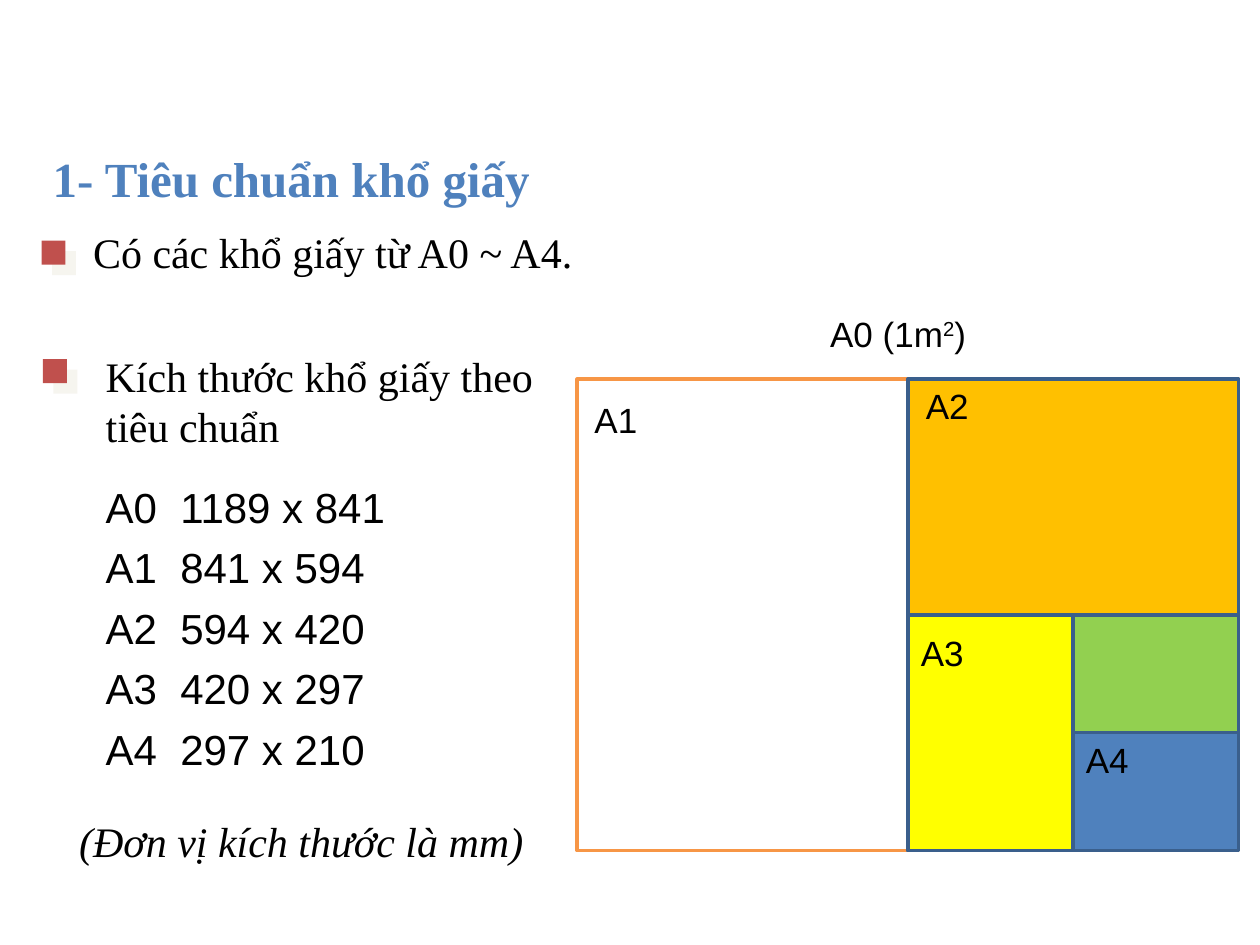
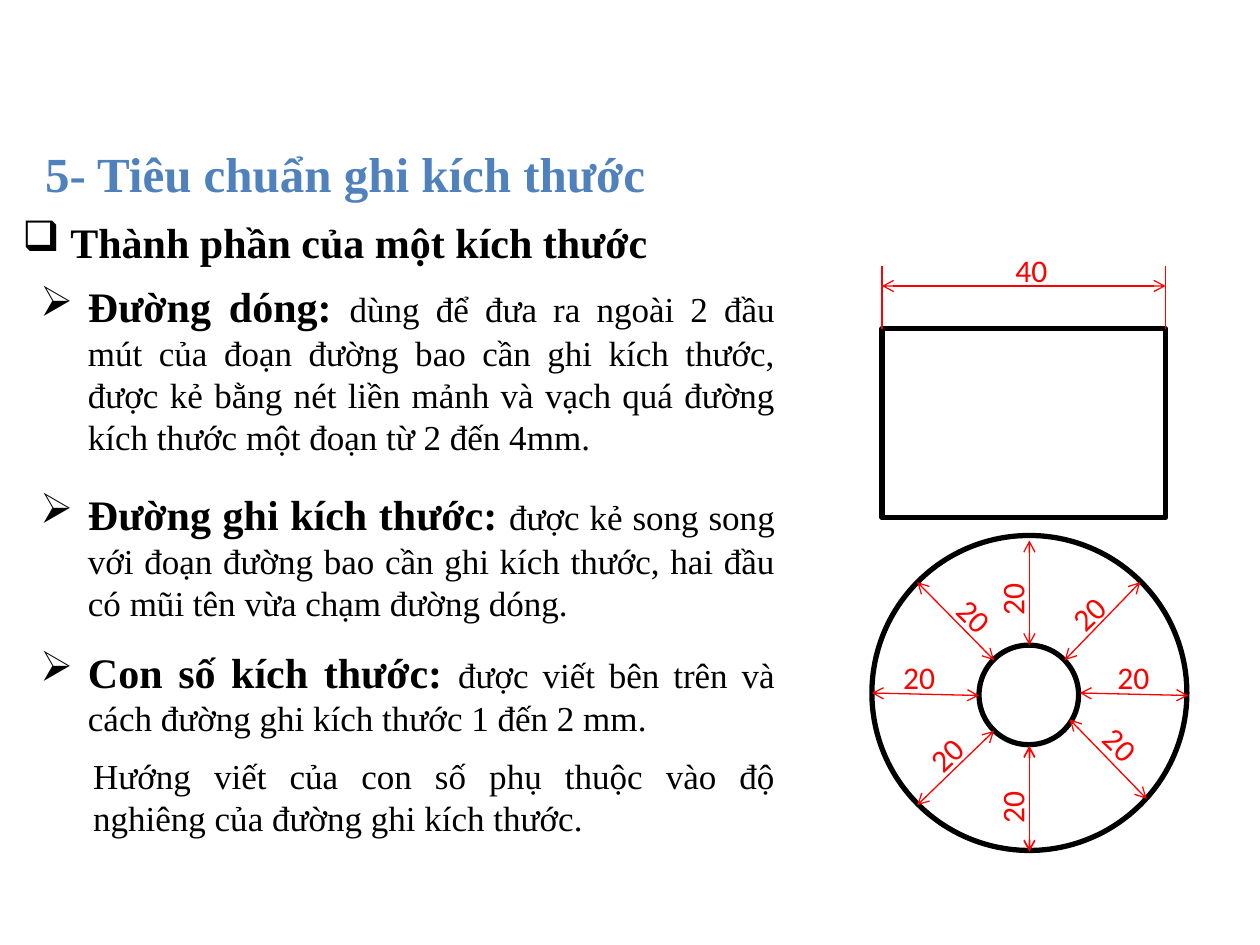
"""Two slides on drawing standards: paper sizes and dimensioning."""
from lxml import etree
from pptx import Presentation
from pptx.dml.color import RGBColor
from pptx.enum.shapes import MSO_CONNECTOR, MSO_SHAPE as SHAPE
from pptx.enum.text import MSO_AUTO_SIZE, PP_ALIGN
from pptx.oxml import parse_xml
from pptx.oxml.ns import nsdecls, qn
from pptx.util import Inches, Pt

BLACK = RGBColor(0x00, 0x00, 0x00)
WHITE = RGBColor(0xFF, 0xFF, 0xFF)
RED = RGBColor(0xFF, 0x00, 0x00)
BLUE = RGBColor(0x4F, 0x81, 0xBD)
NAVY = RGBColor(0x3A, 0x5F, 0x8C)
BRICK = RGBColor(0xC0, 0x50, 0x4D)
PEACH = RGBColor(0xF7, 0x96, 0x46)
ORANGE = RGBColor(0xFF, 0xC0, 0x00)
YELLOW = RGBColor(0xFF, 0xFF, 0x00)
GREEN = RGBColor(0x92, 0xD0, 0x50)
SERIF, SANS, DIGITS = "Times New Roman", "Arial", "Calibri"
TITLE = dict(size=28, color=BLUE, bold=True, wrap=False)
LABEL = dict(font=SANS, size=20, wrap=False)
NUMBER = dict(font=DIGITS, size=18, color=RED)
SHADOW = (f'<a:effectLst {nsdecls("a")}><a:outerShdw dist="107950" dir="2700000" algn="ctr">'
          '<a:srgbClr val="EEECE1"><a:alpha val="50000"/></a:srgbClr>'
          '</a:outerShdw></a:effectLst>')


def add_text(s, x, y, w, h, *paras, font=SERIF, size=24, color=BLACK, bold=False,
             italic=False, wrap=True, rot=0, align=PP_ALIGN.LEFT, bullet=None, spacing=None):
    """Add a text box; a paragraph is a string or a list of (text, size, bold) runs."""
    box = s.shapes.add_textbox(Inches(x), Inches(y), Inches(w), Inches(h))
    box.rotation = rot
    tf = box.text_frame
    tf.word_wrap = wrap
    tf.auto_size = MSO_AUTO_SIZE.SHAPE_TO_FIT_TEXT
    for i, para in enumerate(paras):
        p = tf.add_paragraph() if i else tf.paragraphs[0]
        p.alignment = align
        p.line_spacing = spacing
        if bullet:
            pPr = p._p.get_or_add_pPr()
            pPr.set("marL", str(Inches(0.38)))
            pPr.set("indent", str(-Inches(0.38)))
            etree.SubElement(pPr, qn("a:buChar")).set("char", bullet)
        for run in [(para, size, bold)] if isinstance(para, str) else para:
            r = p.add_run()
            r.text, points, r.font.bold = run
            r.font.size = Pt(points)
            r.font.name = font
            r.font.italic = italic
            r.font.color.rgb = color
    return tf


def add_figure(s, kind, x, y, w, h, fill, line=None, width=2):
    """Add a filled preset shape, outlined when a line colour is given."""
    sp = s.shapes.add_shape(kind, Inches(x), Inches(y), Inches(w), Inches(h))
    sp.shadow.inherit = False
    sp.fill.solid()
    sp.fill.fore_color.rgb = fill
    if line is None:
        sp.line.fill.background()
    else:
        sp.line.color.rgb = line
        sp.line.width = Pt(width)
    return sp


prs = Presentation()
prs.slide_width, prs.slide_height = Inches(10), Inches(7.5)
blank = prs.slide_layouts[6]

s = prs.slides.add_slide(blank)
add_text(s, 0.32, 1.13, 4.03, 0.57, "1- Tiêu chuẩn khổ giấy", **TITLE)
add_text(s, 0.64, 1.75, 4.52, 0.5, "Có các khổ giấy từ A0 ~ A4.")
for x, y in [(0.33, 1.91), (0.34, 2.85)]:
    sp = add_figure(s, SHAPE.RECTANGLE, x, y, 0.19, 0.19, BRICK)
    spPr = sp._element.spPr
    spPr.replace(spPr.find(qn("a:effectLst")), parse_xml(SHADOW))

sides = [1189, 841, 594, 420, 297, 210]
sizes = [f"A{i}\t {a} x {b}" for i, (a, b) in enumerate(zip(sides, sides[1:]))]
tf = add_text(s, 0.74, 2.73, 3.84, 3.49, "Kích thước khổ giấy theo tiêu chuẩn", *sizes)
for p in tf.paragraphs[1:]:
    p.line_spacing = 1.2
    p.runs[0].font.name = SANS
tf.paragraphs[1].space_before = Pt(11.5)
add_text(s, 0.53, 6.34, 4.32, 0.59, "(Đơn vị kích thước là mm)", italic=True, spacing=1.2)

x, y, w, h = 4.58, 3.01, 5.25, 3.74
papers = [(WHITE, PEACH), (ORANGE, NAVY), (YELLOW, NAVY), (GREEN, NAVY), (BLUE, NAVY)]
for i, (fill, line) in enumerate(papers):
    add_figure(s, SHAPE.RECTANGLE, x, y, w, h, fill, line)
    if i % 2:
        h /= 2
        y += h
    else:
        w /= 2
        x += w
for name, x, y in [("A3", 7.21, 4.96), ("A2", 7.25, 3), ("A1", 4.62, 3.11), ("A4", 8.52, 5.81)]:
    add_text(s, x, y, 0.54, 0.43, name, **LABEL)
area = [("A0 (1m", 20, False), ("2", 20, False), (")", 20, False)]
tf = add_text(s, 6.49, 2.43, 1.3, 0.44, area, **LABEL)
tf.paragraphs[0].runs[1]._r.get_or_add_rPr().set("baseline", "30000")

s = prs.slides.add_slide(blank)
add_text(s, 0.26, 1.09, 5.02, 0.57, "5- Tiêu chuẩn ghi kích thước", **TITLE)
add_text(s, 0.08, 1.67, 5.21, 0.5, "Thành phần của một kích thước",
         bold=True, wrap=False, bullet="❑")
parts = [
    (2.18, 1.92, "Đường dóng: ",
     "dùng để đưa ra ngoài 2 đầu mút của đoạn đường bao cần ghi kích thước, được kẻ bằng "
     "nét liền mảnh và vạch quá đường kích thước một đoạn từ 2 đến 4mm."),
    (3.83, 1.58, "Đường ghi kích thước: ",
     "được kẻ song song với đoạn đường bao cần ghi kích thước, hai đầu có mũi tên vừa "
     "chạm đường dóng."),
    (5.08, 0.84, "Con số kích thước: ",
     "được viết bên trên và cách đường ghi kích thước 1 đến 2 mm."),
]
for y, h, term, meaning in parts:
    add_text(s, 0.22, y, 6.03, h, [(term, 24, True), (meaning, 20, False)],
             align=PP_ALIGN.JUSTIFY, bullet="➢")
add_text(s, 0.64, 5.94, 5.61, 0.77,
         "Hướng viết của con số phụ thuộc vào độ nghiêng của đường ghi kích thước.",
         size=20, align=PP_ALIGN.JUSTIFY)

for kind, x, y, w, h in [(SHAPE.OVAL, 6.92, 4.25, 2.5, 2.5),
                         (SHAPE.RECTANGLE, 7, 2.61, 2.25, 1.5),
                         (SHAPE.OVAL, 7.77, 5.12, 0.79, 0.79)]:
    add_figure(s, kind, x, y, w, h, WHITE, BLACK, 3)

dimension_lines = [
    (7, 2.61, 7, 2.11, 1, False),
    (9.25, 2.61, 9.25, 2.11, 0.75, False),
    (7, 2.27, 9.25, 2.27, 0.75, True),
    (8.17, 5.92, 8.17, 6.76, 1, True),
    (8.17, 4.29, 8.17, 5.12, 0.75, True),
    (6.92, 5.5, 7.77, 5.52, 0.75, True),
    (8.57, 5.5, 9.43, 5.52, 0.75, True),
    (7.28, 4.62, 7.89, 5.24, 0.75, True),
    (8.49, 5.71, 9.1, 6.34, 0.75, True),
    (7.28, 6.39, 7.89, 5.8, 0.75, True),
    (8.45, 5.24, 9.05, 4.62, 0.75, True),
]
for x1, y1, x2, y2, width, arrows in dimension_lines:
    c = s.shapes.add_connector(MSO_CONNECTOR.STRAIGHT, Inches(x1), Inches(y1),
                               Inches(x2), Inches(y2))
    c.line.color.rgb = RED
    c.line.width = Pt(width)
    if arrows:
        for end in ("a:headEnd", "a:tailEnd"):
            etree.SubElement(c.line._get_or_add_ln(), qn(end)).set("type", "arrow")
    etree.SubElement(c._element.spPr, qn("a:effectLst"))

add_text(s, 7.96, 1.94, 0.62, 0.4, "40", **NUMBER)
for x, y, h, rot in [(7.07, 5.17, 0.4, 0), (8.77, 5.17, 0.4, 0),
                     (7.72, 4.47, 0.4, 270), (7.72, 6.12, 0.4, 270),
                     (7.47, 4.74, 0.44, 44.3), (8.63, 5.76, 0.44, 44.3),
                     (7.26, 5.73, 0.4, 316.5), (8.39, 4.61, 0.4, 316.5)]:
    add_text(s, x, y, 0.62, h, "20", rot=rot, **NUMBER)

prs.save("out.pptx")
